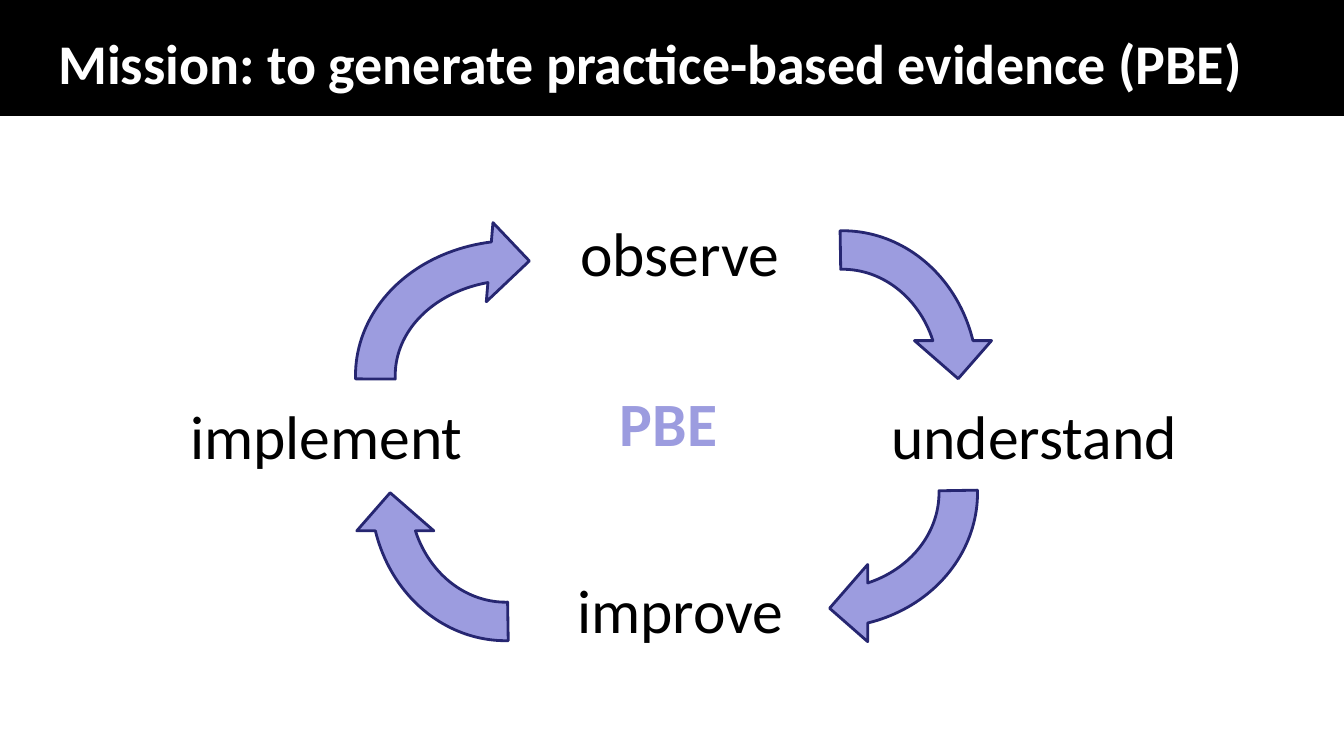
"""Build the practice-based evidence cycle slide."""
from pptx import Presentation
from pptx.dml.color import RGBColor
from pptx.enum import shapes, text
from pptx.util import Cm, Pt

BLACK = RGBColor(0x00, 0x00, 0x00)
WHITE = RGBColor(0xFF, 0xFF, 0xFF)
LAVENDER = RGBColor(0x9C, 0x9C, 0xDF)
NAVY = RGBColor(0x26, 0x26, 0x71)


def write(shape, wording, size=44, color=BLACK, bold=False, align=text.PP_ALIGN.CENTER):
    frame = shape.text_frame
    frame.word_wrap = True
    frame.auto_size = text.MSO_AUTO_SIZE.NONE
    frame.vertical_anchor = text.MSO_ANCHOR.TOP
    frame.margin_left = frame.margin_right = Cm(0.15)
    frame.margin_top = frame.margin_bottom = Cm(0.18)
    paragraph = frame.paragraphs[0]
    paragraph.text = wording
    paragraph.alignment = align
    paragraph.font.name = "Calibri"
    paragraph.font.size = Pt(size)
    paragraph.font.bold = bold
    paragraph.font.color.rgb = color


presentation = Presentation()
presentation.slide_width = Cm(33.87)
presentation.slide_height = Cm(19.05)
slide = presentation.slides.add_slide(presentation.slide_layouts[5])

title = slide.shapes.title
title.left, title.top, title.width, title.height = Cm(1.32), Cm(0.53), Cm(31.19), Cm(1.88)
write(title, "Mission: to generate practice-based evidence (PBE)",
      size=40, color=WHITE, bold=True, align=text.PP_ALIGN.LEFT)

title_bar = slide.shapes.add_shape(
    shapes.MSO_SHAPE.RECTANGLE, 0, 0, presentation.slide_width, Cm(2.92))
title_bar.shadow.inherit = False
title_bar.fill.solid()
title_bar.fill.fore_color.rgb = BLACK
title_bar.line.fill.background()
title.element.addprevious(title_bar.element)

steps = [
    ("observe", 12.75, 5.23, 8.76),
    ("understand", 20.98, 9.86, 10.16),
    ("improve", 12.07, 14.22, 10.16),
    ("implement", 3.15, 9.86, 10.16),
]
for wording, left, top, width in steps:
    step = slide.shapes.add_textbox(Cm(left), Cm(top), Cm(width), Cm(1.4))
    write(step, wording)

arrows = [
    (9.09, 4.93, 8, 9.27, 274.8, 159.27),
    (17.35, 5.33, 7.77, 8.43, 0, 161.42),
    (17.02, 8.2, 7.77, 8.43, 90, 161.42),
    (8.86, 8.2, 7.77, 8.43, 180, 161.42),
]
for left, top, width, height, rotation, start_angle in arrows:
    arrow = slide.shapes.add_shape(
        shapes.MSO_SHAPE.CIRCULAR_ARROW, Cm(left), Cm(top), Cm(width), Cm(height))
    arrow.rotation = rotation
    for index, value in enumerate((0.125, 11.423, 204.577, start_angle, 0.125)):
        arrow.adjustments[index] = value
    arrow.shadow.inherit = False
    arrow.fill.solid()
    arrow.fill.fore_color.rgb = LAVENDER
    arrow.line.color.rgb = NAVY
    arrow.line.width = Pt(2)

center = slide.shapes.add_textbox(Cm(12.47), Cm(9.53), Cm(8.76), Cm(2.21))
write(center, "PBE", color=LAVENDER, bold=True)

presentation.save("out.pptx")
